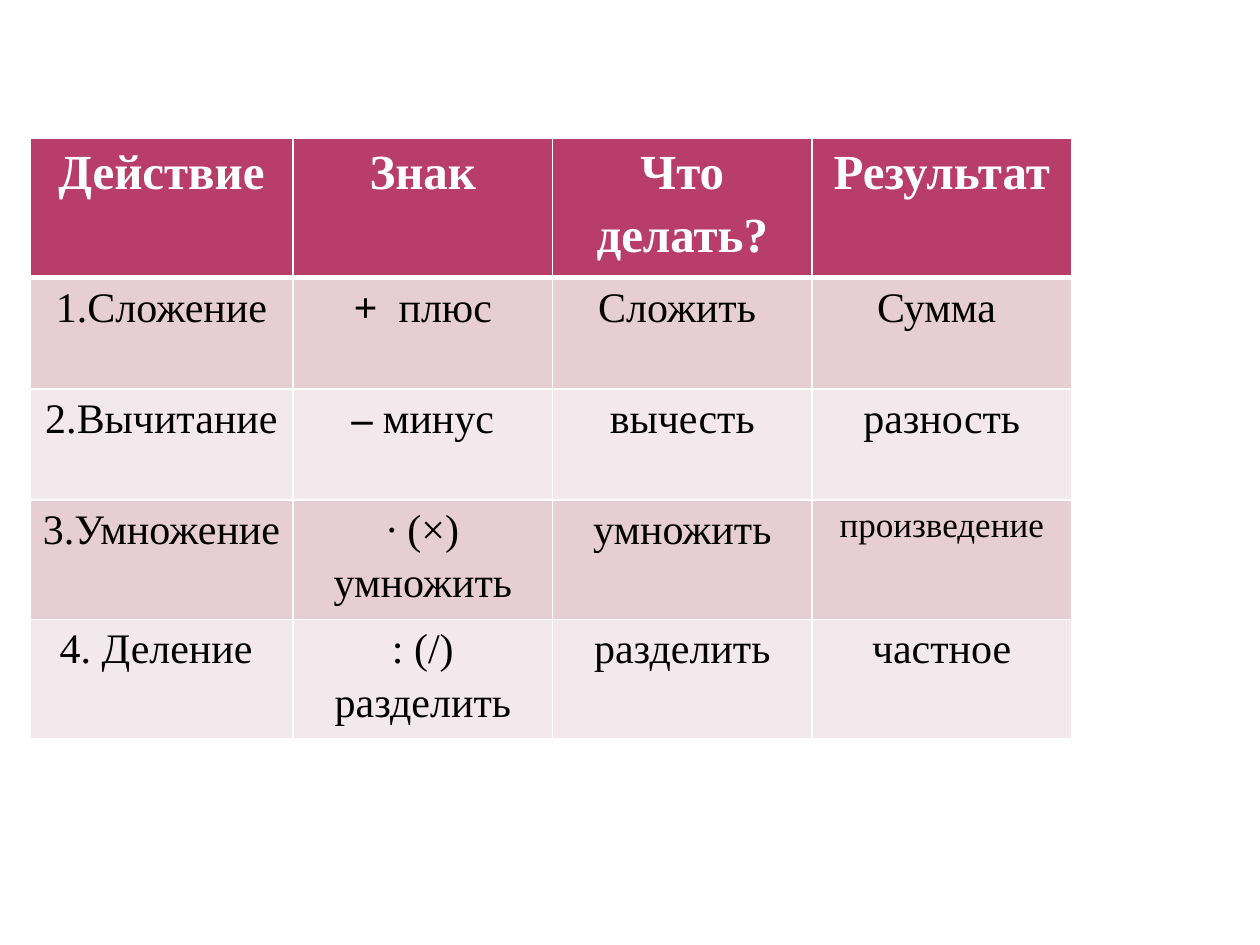
from lxml.etree import SubElement
from pptx import Presentation
from pptx.dml.color import RGBColor
from pptx.enum.text import PP_ALIGN as Align
from pptx.oxml.ns import qn
from pptx.util import Cm, Pt

FONT = "Times New Roman"
WHITE, BLACK, CRIMSON = "FFFFFF", "000000", "B83D68"
BANDS = ("E6CED4", "F3E8EB")
COLUMN_WIDTHS = (5.31, 5.23, 5.23, 5.23)
ROW_HEIGHTS = (2.82, 2.24, 2.24, 2.41, 2.41)
MARGINS = {"margin_left": Cm(0.18), "margin_right": Cm(0.18),
           "margin_top": 0, "margin_bottom": 0}

# A pair holds a bold sign and the plain words after it.
OPERATIONS = (
    ("Действие", "Знак", "Что делать?", "Результат"),
    ("1.Сложение", ("+ ", " плюс"), "Сложить ", "Сумма "),
    ("2.Вычитание", ("–", " минус"), "вычесть", "разность"),
    ("3.Умножение ", "∙ (×) умножить", "умножить", "произведение"),
    ("4. Деление ", ": (/) разделить", "разделить", "частное"),
)


def color(value):
    return RGBColor.from_string(value)


def apply(target, values):
    for name, value in values.items():
        setattr(target, name, value)


def add_borders(cell, widths):
    """Draw white lines; widths maps a side (L, R, T, B) to points."""
    properties = cell._tc.get_or_add_tcPr()
    for side, width in widths.items():
        line = SubElement(properties, qn(f"a:ln{side}"), w=str(Pt(width)))
        fill = SubElement(line, qn("a:solidFill"))
        SubElement(fill, qn("a:srgbClr"), val=WHITE)


def add_span(para, text, size, bold, text_color):
    span = para.add_run()
    span.text = text
    apply(span.font, {"name": FONT, "size": Pt(size), "bold": bold})
    span.font.color.rgb = color(text_color)


def fill_cell(cell, content, row):
    header = row == 0
    apply(cell, MARGINS)
    add_borders(cell, {"L": 1, "R": 1, "T": 3 if row == 1 else 1,
                       "B": 3 if header else 1})
    cell.fill.solid()
    cell.fill.fore_color.rgb = color(CRIMSON if header else BANDS[(row - 1) % 2])

    para = cell.text_frame.paragraphs[0]
    apply(para, {"alignment": Align.CENTER, "line_spacing": 1.15})
    size = 28 if header else 20 if content == "произведение" else 24
    text_color = WHITE if header else BLACK
    if isinstance(content, tuple):
        sign, content = content
        add_span(para, sign, size, True, text_color)
    add_span(para, content, size, header, text_color)


def add_operations_table(page):
    frame = page.shapes.add_table(
        len(ROW_HEIGHTS), len(COLUMN_WIDTHS), Cm(0.6), Cm(2.78),
        Cm(sum(COLUMN_WIDTHS)), Cm(sum(ROW_HEIGHTS)))
    table = frame.table
    for column, width in zip(table.columns, COLUMN_WIDTHS):
        column.width = Cm(width)
    for row, height in zip(table.rows, ROW_HEIGHTS):
        row.height = Cm(height)
    for row, contents in enumerate(OPERATIONS):
        for column, content in enumerate(contents):
            fill_cell(table.cell(row, column), content, row)


def main():
    deck = Presentation()
    apply(deck, {"slide_width": Cm(25.4), "slide_height": Cm(19.05)})
    page = deck.slides.add_slide(deck.slide_layouts[6])
    add_operations_table(page)
    deck.save("out.pptx")


if __name__ == "__main__":
    main()
